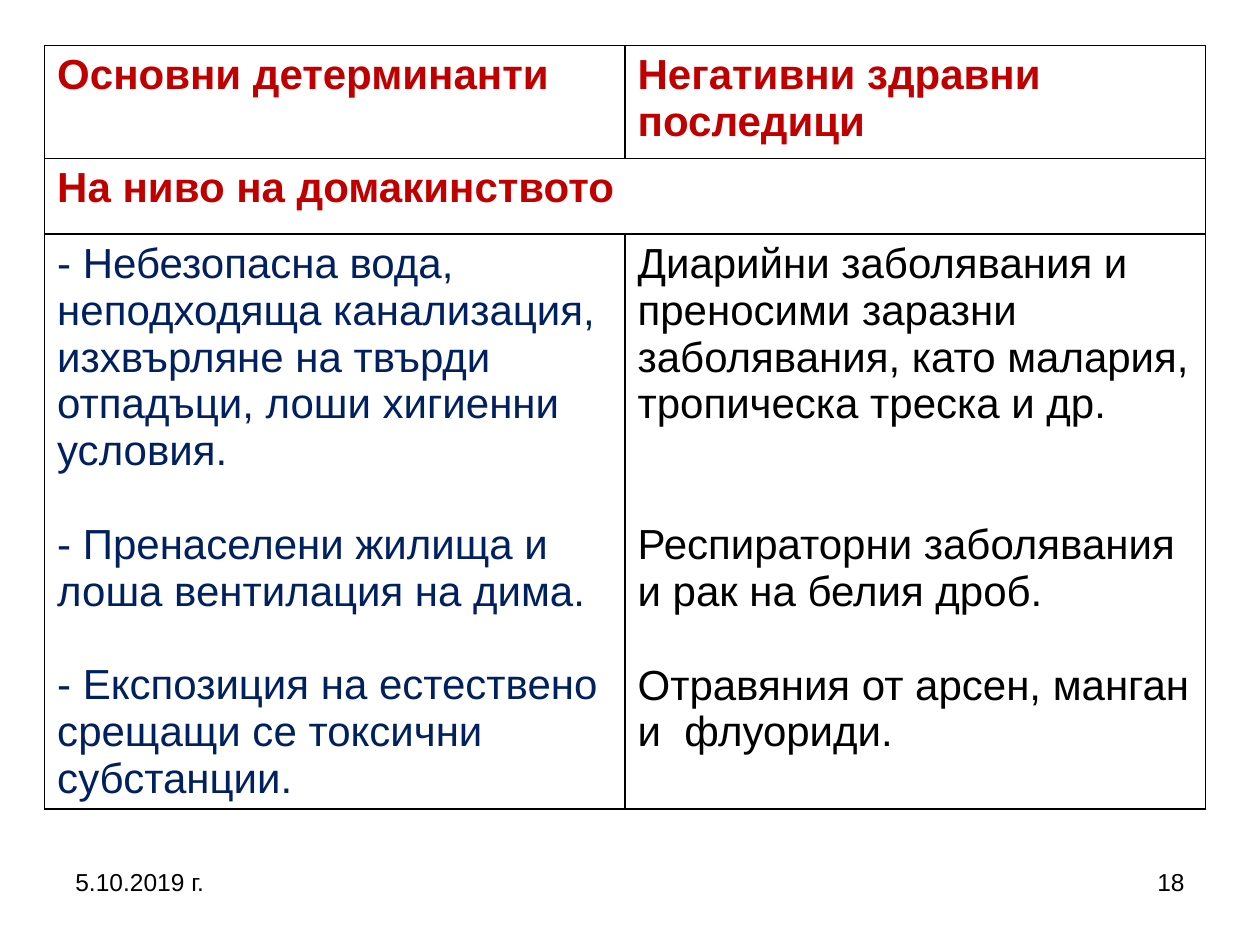
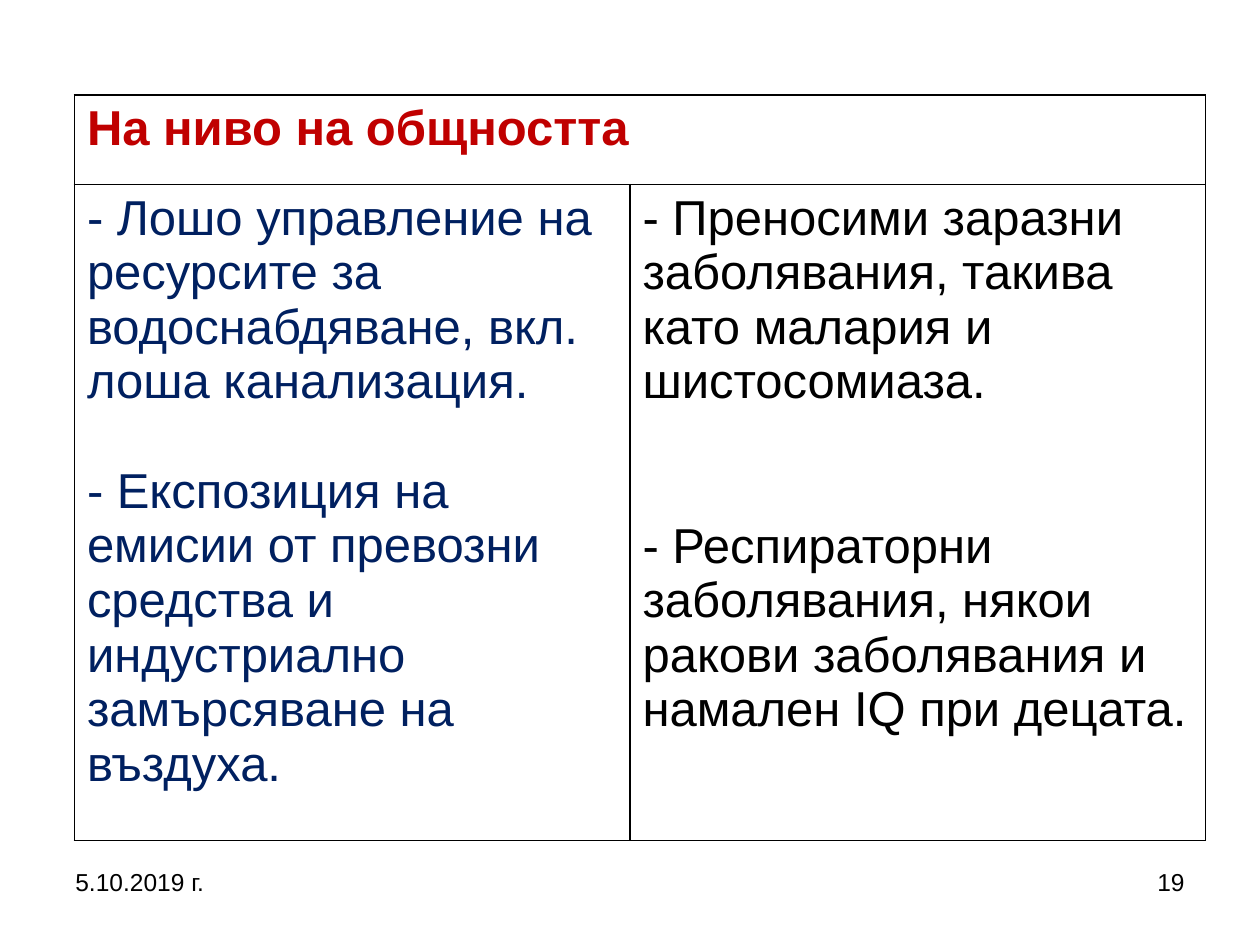
from dataclasses import dataclass

from lxml import etree
from pptx import Presentation
from pptx.dml.color import RGBColor
from pptx.enum.text import PP_ALIGN
from pptx.oxml.ns import qn
from pptx.util import Cm, Pt

RED = RGBColor(0xC0, 0x00, 0x00)
NAVY = RGBColor(0x00, 0x20, 0x60)
BLACK = RGBColor(0x00, 0x00, 0x00)
WHITE = RGBColor(0xFF, 0xFF, 0xFF)
LEFT, RIGHT = PP_ALIGN.LEFT, PP_ALIGN.RIGHT
FONT = "Arial"
LEADING = 1.117  # line height relative to the text size
EDGES = ("a:lnL", "a:lnR", "a:lnT", "a:lnB")
DATE = "5.10.2019 г."


@dataclass
class Para:
    text: str
    gap: int = 0  # free lines above


@dataclass
class Entry:
    paras: list[Para]
    color: RGBColor
    bold: bool = False


@dataclass
class Row:
    height: float
    cells: list[Entry]  # a single entry spans the whole row


@dataclass
class Page:
    number: int
    left: float
    top: float
    cols: list[float]
    size: int
    rows: list[Row]


def head(text: str) -> Entry:
    return Entry([Para(text)], RED, True)


def add_run(para, text: str, size: int, color: RGBColor, bold: bool = False) -> None:
    run = para.add_run()
    run.text = text
    run.font.name = FONT
    run.font.size = Pt(size)
    run.font.bold = bold
    run.font.color.rgb = color


def add_edges(cell) -> None:
    props = cell._tc.get_or_add_tcPr()
    for pos, tag in enumerate(EDGES):
        line = etree.Element(qn(tag), w=str(Pt(1)))
        fill = etree.SubElement(line, qn("a:solidFill"))
        etree.SubElement(fill, qn("a:srgbClr"), val=str(BLACK))
        props.insert(pos, line)


def fill_cell(cell, entry: Entry, size: int) -> None:
    frame = cell.text_frame
    for i, item in enumerate(entry.paras):
        para = frame.add_paragraph() if i else frame.paragraphs[0]
        para.space_before = Pt(round(item.gap * size * LEADING, 1))
        add_run(para, item.text, size, entry.color, entry.bold)


def add_grid(slide, page: Page) -> None:
    rows, cols = page.rows, page.cols
    table = slide.shapes.add_table(
        len(rows), len(cols), Cm(page.left), Cm(page.top),
        Cm(sum(cols)), Cm(sum(row.height for row in rows))).table
    table.first_row = table.horz_banding = False
    for col, width in zip(table.columns, cols):
        col.width = Cm(width)
    for r, row in enumerate(rows):
        table.rows[r].height = Cm(row.height)
        for cell in table.rows[r].cells:
            cell.fill.solid()
            cell.fill.fore_color.rgb = WHITE
            add_edges(cell)
        if len(row.cells) == 1:
            table.cell(r, 0).merge(table.cell(r, len(cols) - 1))
        for c, entry in enumerate(row.cells):
            fill_cell(table.cell(r, c), entry, page.size)


def add_note(slide, text: str, left: float, align: PP_ALIGN) -> None:
    box = slide.shapes.add_textbox(Cm(left), Cm(17.36), Cm(5.93), Cm(1.32))
    box.text_frame.word_wrap = True
    para = box.text_frame.paragraphs[0]
    para.alignment = align
    add_run(para, text, 14, BLACK)


PAGES = [
    Page(18, 0.9, 0.92, [11.7, 11.7], 24, [
        Row(2.28, [head("Основни детерминанти"),
                   head("Негативни здравни последици")]),
        Row(1.52, [head("На ниво на домакинството")]),
        Row(11.58, [
            Entry([
                Para("- Небезопасна вода, неподходяща канализация, изхвърляне "
                     "на твърди отпадъци, лоши хигиенни условия."),
                Para("- Пренаселени жилища и лоша вентилация на дима.", 1),
                Para("- Експозиция на естествено срещащи се токсични "
                     "субстанции.", 1),
            ], NAVY),
            Entry([
                Para("Диарийни заболявания и преносими заразни заболявания, "
                     "като малария, тропическа треска и др."),
                Para("Респираторни заболявания и рак на белия дроб.", 2),
                Para("Отравяния от арсен, манган и  флуориди.", 1),
            ], BLACK),
        ]),
    ]),
    Page(19, 1.5, 1.92, [11.2, 11.6], 28, [
        Row(1.8, [head("На ниво на общността")]),
        Row(12.37, [
            Entry([
                Para("- Лошо управление на ресурсите за водоснабдяване, вкл. "
                     "лоша канализация."),
                Para("- Експозиция на емисии от превозни средства и "
                     "индустриално замърсяване на въздуха.", 1),
            ], NAVY),
            Entry([
                Para("- Преносими заразни заболявания, такива като малария и "
                     "шистосомиаза."),
                Para("- Респираторни заболявания, някои ракови заболявания и "
                     "намален IQ при децата.", 2),
            ], BLACK),
        ]),
    ]),
]


def main() -> None:
    deck = Presentation()
    deck.slide_width, deck.slide_height = Cm(25.4), Cm(19.05)
    for page in PAGES:
        slide = deck.slides.add_slide(deck.slide_layouts[6])
        add_grid(slide, page)
        # Footer: date and page number
        add_note(slide, DATE, 1.27, LEFT)
        add_note(slide, str(page.number), 18.2, RIGHT)
    deck.save("out.pptx")


if __name__ == "__main__":
    main()
